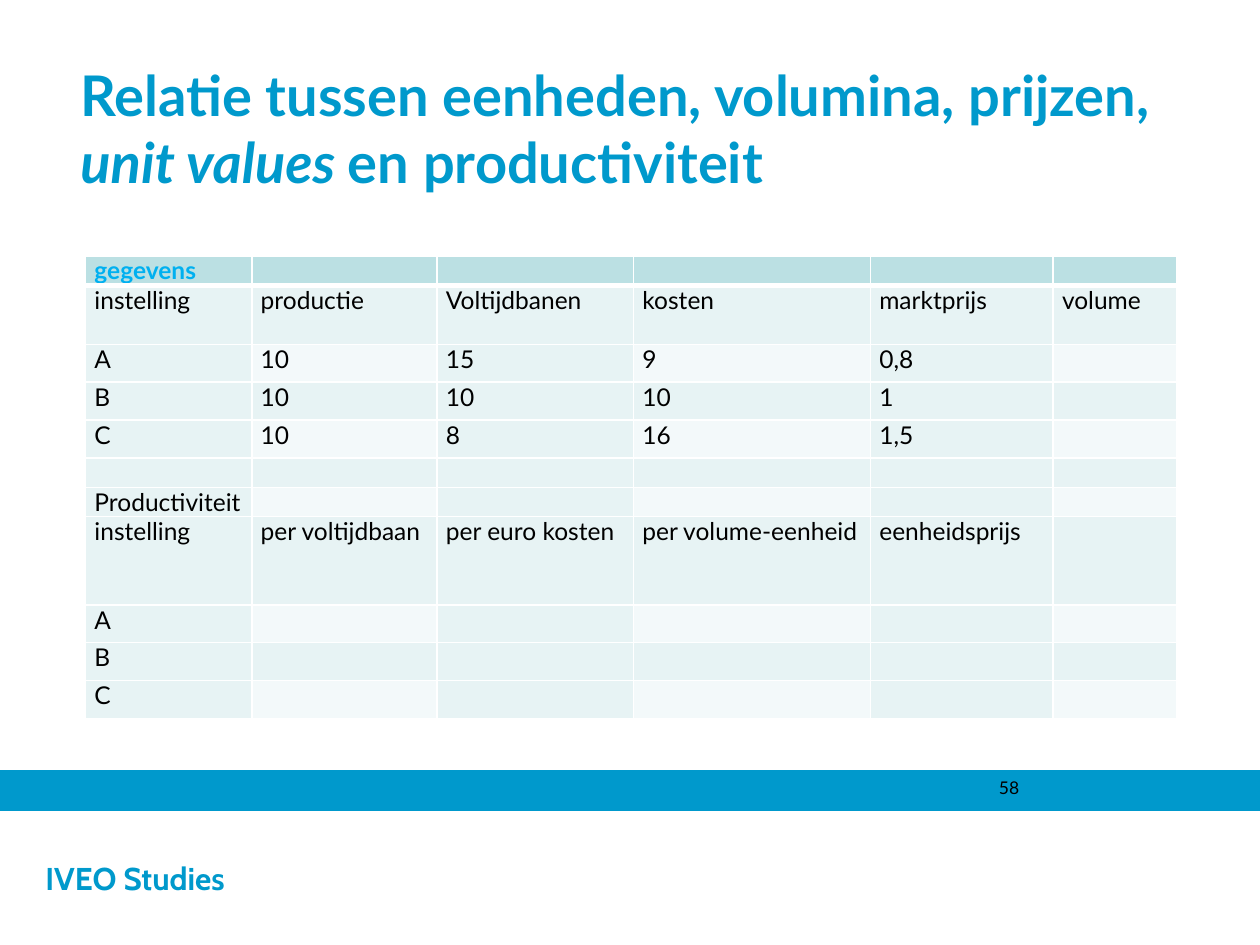
from lxml import etree
from pptx import Presentation
from pptx import util as u
from pptx.dml.color import RGBColor
from pptx.enum import shapes, text
from pptx.oxml.ns import qn

COLORS = {
    "brand": "0099CC",
    "accent": "00B0F0",
    "black": "000000",
    "white": "FFFFFF",
    "header": "BBE0E3",
    "band": "E7F3F4",
    "light": "F3F9FA",
}
COLUMN_WIDTHS = [1.32, 1.47, 1.56, 1.88, 1.45, 0.98]
ROW_HEIGHTS = [0.23, 0.47, 0.3, 0.3, 0.3, 0.23, 0.23, 0.7, 0.3, 0.3, 0.3]
ROWS = [
    ["gegevens"],
    ["instelling", "productie", "Voltijdbanen", "kosten", "marktprijs", "volume"],
    ["A", "10", "15", "9", "0,8"],
    ["B", "10", "10", "10", "1"],
    ["C", "10", "8", "16", "1,5"],
    [],
    ["Productiviteit"],
    ["instelling", "per voltijdbaan", "per euro kosten", "per volume-eenheid",
     "eenheidsprijs"],
    ["A"],
    ["B"],
    ["C"],
]


def rgb(name):
    return RGBColor.from_string(COLORS[name])


def style_span(span, size, color, bold=False, italic=False, face="Lato"):
    font = span.font
    font.name, font.size = face, u.Pt(size)
    font.bold, font.italic = bold, italic
    font.color.rgb = rgb(color)


def add_bar(page, bounds, fill):
    bar = page.shapes.add_shape(shapes.MSO_SHAPE.RECTANGLE, *map(u.Inches, bounds))
    bar.shadow.inherit = False
    bar.fill.solid()
    bar.fill.fore_color.rgb = rgb(fill)
    bar.line.fill.background()
    return bar


def add_footer(page, bounds):
    footer = add_bar(page, bounds, "white")
    frame = footer.text_frame
    frame.margin_left = u.Inches(0.36)
    frame.vertical_anchor = text.MSO_ANCHOR.MIDDLE
    frame.text = "IVEO Studies"
    para = frame.paragraphs[0]
    para.alignment = text.PP_ALIGN.LEFT
    style_span(para.runs[0], 18, "brand", bold=True, face="Cabin")


def add_rule(page, bounds):
    rule = add_bar(page, bounds, "brand")
    rule.line.color.rgb = rgb("brand")
    rule.line.width = u.Pt(0.75)


def add_text(page, bounds, parts, size, color, bold=False):
    """Place one paragraph made of (wording, italic) parts."""
    box = page.shapes.add_textbox(*map(u.Inches, bounds))
    box.text_frame.word_wrap = True
    para = box.text_frame.paragraphs[0]
    for wording, italic in parts:
        span = para.add_run()
        span.text = wording
        style_span(span, size, color, bold, italic)


def set_borders(cell, widths):
    properties = cell._tc.get_or_add_tcPr()
    for side, width in zip("LRTB", widths):
        line = etree.SubElement(properties, qn(f"a:ln{side}"), w=str(u.Pt(width)))
        fill = etree.SubElement(line, qn("a:solidFill"))
        etree.SubElement(fill, qn("a:srgbClr"), val=COLORS["white"])


def cell_fill(row, column):
    if row == 0:
        return "header"
    return "light" if row > 1 and row % 2 == 0 and column % 2 else "band"


def fill_cell(cell, wording, row, column):
    top = 3 if row == 1 else 1
    bottom = 3 if row == 0 else 1
    set_borders(cell, (1, 1, top, bottom))
    cell.fill.solid()
    cell.fill.fore_color.rgb = rgb(cell_fill(row, column))
    # The narrow right margin keeps the longest words on one line
    cell.margin_left, cell.margin_right = u.Inches(0.07), u.Inches(0.03)
    cell.margin_top = cell.margin_bottom = 0
    para = cell.text_frame.paragraphs[0]
    if wording:
        para.text = wording
        style_span(para.runs[0], 14, "accent" if row == 0 else "black", bold=row == 0)
    else:
        # Keeps empty cells from stretching their row
        etree.SubElement(para._p, qn("a:endParaRPr"), sz="1400")


def add_data_table(page, bounds):
    table = page.shapes.add_table(
        len(ROWS), len(COLUMN_WIDTHS), *map(u.Inches, bounds)).table
    table.first_row = table.horz_banding = False
    for column, width in zip(table.columns, COLUMN_WIDTHS):
        column.width = u.Inches(width)
    for row, (height, words) in enumerate(zip(ROW_HEIGHTS, ROWS)):
        table.rows[row].height = u.Inches(height)
        for column in range(len(COLUMN_WIDTHS)):
            wording = words[column] if column < len(words) else ""
            fill_cell(table.cell(row, column), wording, row, column)


def main():
    deck = Presentation()
    deck.slide_width, deck.slide_height = u.Inches(10), u.Inches(7.5)
    page = deck.slides.add_slide(deck.slide_layouts[6])

    # Footer and blue rule
    add_footer(page, (0, 6.44, 10.01, 1.06))
    add_rule(page, (0, 6.12, 10, 0.31))

    # Title and page number
    title = [("Relatie tussen eenheden, volumina, prijzen, ", False),
             ("unit values ", True), ("en productiviteit", False)]
    add_text(page, (0.54, 0.43, 8.94, 0.91), title, 32, "brand", bold=True)
    add_text(page, (7.83, 6.12, 2.08, 0.25), [("58", False)], 10, "black")

    # Data and productivity table
    add_data_table(page, (0.68, 2.03, sum(COLUMN_WIDTHS), sum(ROW_HEIGHTS)))
    deck.save("out.pptx")


if __name__ == "__main__":
    main()
